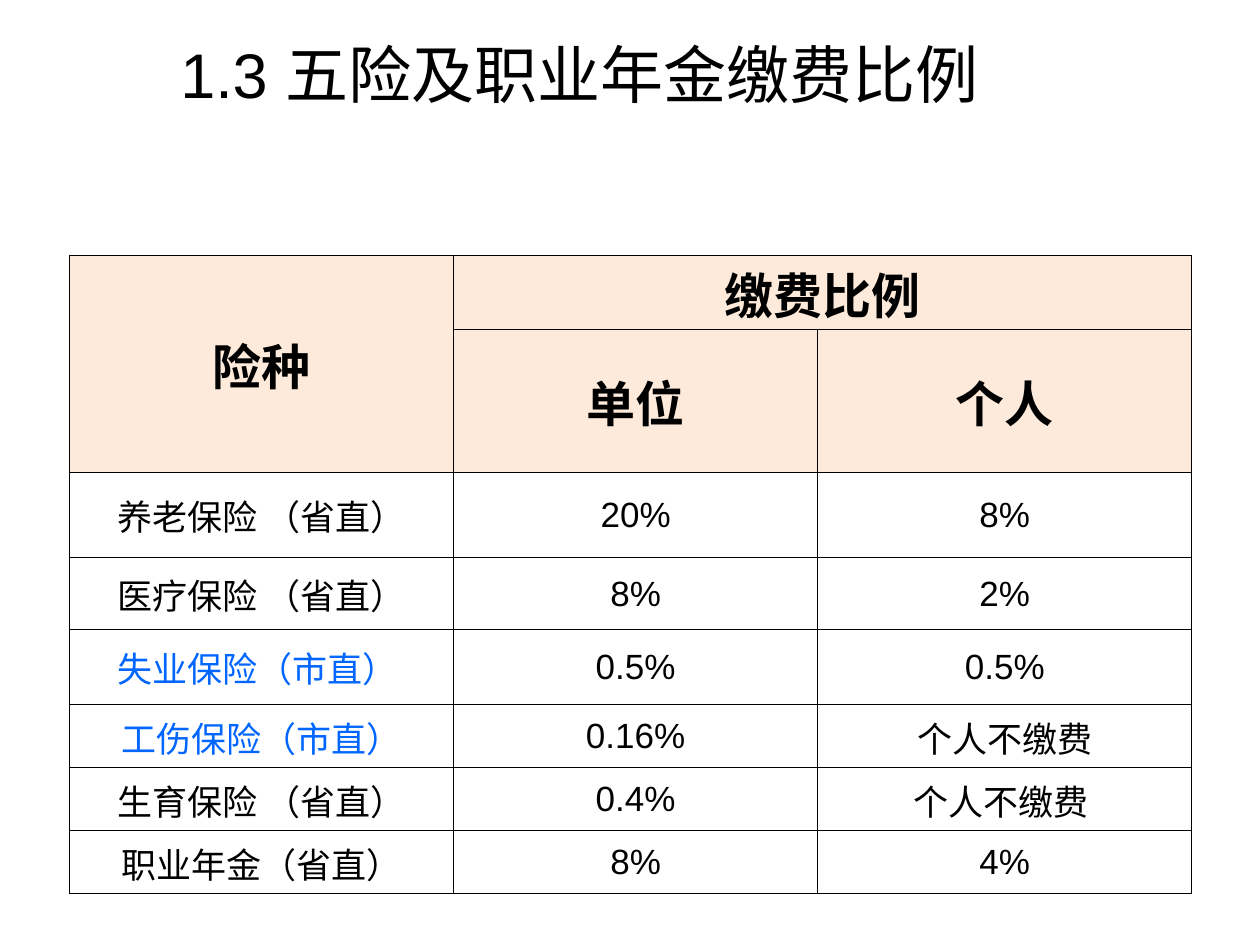
"""Build a slide with a table of social insurance contribution rates."""
from typing import NamedTuple

import pptx
import pptx.dml.color
import pptx.enum.text
import pptx.oxml
import pptx.oxml.ns
import pptx.util

Pt = pptx.util.Pt
RGB = pptx.dml.color.RGBColor
COLORS = {"text": "000000", "city": "0066FF", "header": "FDEADA", "body": "FFFFFF"}
COLUMNS = [219.6, 208.1, 213.8]
ROWS = [41.8, 81.7, 49, 40.8, 43.2, 36, 36, 36]


class Rate(NamedTuple):
    insurance: str
    employer: str
    employee: str
    color: str = "text"


HEADERS = [(0, 0, "险种"), (0, 1, "缴费比例"), (1, 1, "单位"), (1, 2, "个人")]
RATES = [
    Rate("养老保险 （省直）", "20%", "8%"),
    Rate("医疗保险 （省直）", "8%", "2%"),
    Rate("失业保险（市直） ", "0.5%", "0.5%", "city"),
    Rate("工伤保险（市直）", "0.16%", "个人不缴费", "city"),
    Rate("生育保险 （省直）", "0.4%", "个人不缴费 "),
    Rate("职业年金（省直）", "8%", "4%"),
]


def add_title(slide) -> None:
    sp = slide.shapes.title
    sp.left, sp.top, sp.width, sp.height = Pt(95.8), Pt(16.6), Pt(512), Pt(51)
    tf = sp.text_frame
    tf.auto_size = pptx.enum.text.MSO_AUTO_SIZE.NONE
    tf.vertical_anchor = pptx.enum.text.MSO_ANCHOR.TOP
    p = tf.paragraphs[0]
    p.alignment = pptx.enum.text.PP_ALIGN.LEFT
    p.font.size = Pt(36)
    p.font.color.rgb = RGB.from_string(COLORS["text"])
    for text, font in [("1.3 ", "Arial"), ("五险及职业年金缴费比例", "Calibri")]:
        r = p.add_run()
        r.text = text
        r.font.name = font


def style_cell(cell, fill: str) -> None:
    cell.margin_left = cell.margin_right = cell.margin_top = Pt(0.72)
    cell.margin_bottom = 0
    cell.vertical_anchor = pptx.enum.text.MSO_ANCHOR.MIDDLE
    for side in ("lnL", "lnR", "lnT", "lnB"):
        cell._tc.get_or_add_tcPr().append(pptx.oxml.parse_xml(
            f'<a:{side} {pptx.oxml.ns.nsdecls("a")} w="{Pt(0.5)}"><a:solidFill>'
            f'<a:srgbClr val="{COLORS["text"]}"/></a:solidFill></a:{side}>'))
    cell.fill.solid()
    cell.fill.fore_color.rgb = RGB.from_string(COLORS[fill])


def write_cell(cell, text: str, size: float, bold: bool, color: str = "text") -> None:
    p = cell.text_frame.paragraphs[0]
    p.text = text
    p.alignment = pptx.enum.text.PP_ALIGN.CENTER
    p.font.name = "Arial"
    p.font.size = Pt(size)
    p.font.bold = bold
    p.font.color.rgb = RGB.from_string(COLORS[color])


def add_rates(slide) -> None:
    table = slide.shapes.add_table(len(ROWS), len(COLUMNS), Pt(39.6), Pt(146.2),
                                   Pt(sum(COLUMNS)), Pt(sum(ROWS))).table
    table.first_row = table.horz_banding = False
    for column, width in zip(table.columns, COLUMNS):
        column.width = Pt(width)
    for i, (row, height) in enumerate(zip(table.rows, ROWS)):
        row.height = Pt(height)
        for cell in row.cells:
            style_cell(cell, "header" if i < 2 else "body")
    table.cell(0, 0).merge(table.cell(1, 0))
    table.cell(0, 1).merge(table.cell(0, 2))
    for i, j, text in HEADERS:
        write_cell(table.cell(i, j), text, 28, True)
    for i, rate in enumerate(RATES, start=2):
        write_cell(table.cell(i, 0), rate.insurance, 20, False, rate.color)
        write_cell(table.cell(i, 1), rate.employer, 20, False)
        write_cell(table.cell(i, 2), rate.employee, 20, False)


def main() -> None:
    prs = pptx.Presentation()
    prs.slide_width, prs.slide_height = Pt(720), Pt(540)
    slide = prs.slides.add_slide(prs.slide_layouts[5])
    add_title(slide)
    add_rates(slide)
    prs.save("out.pptx")


if __name__ == "__main__":
    main()
